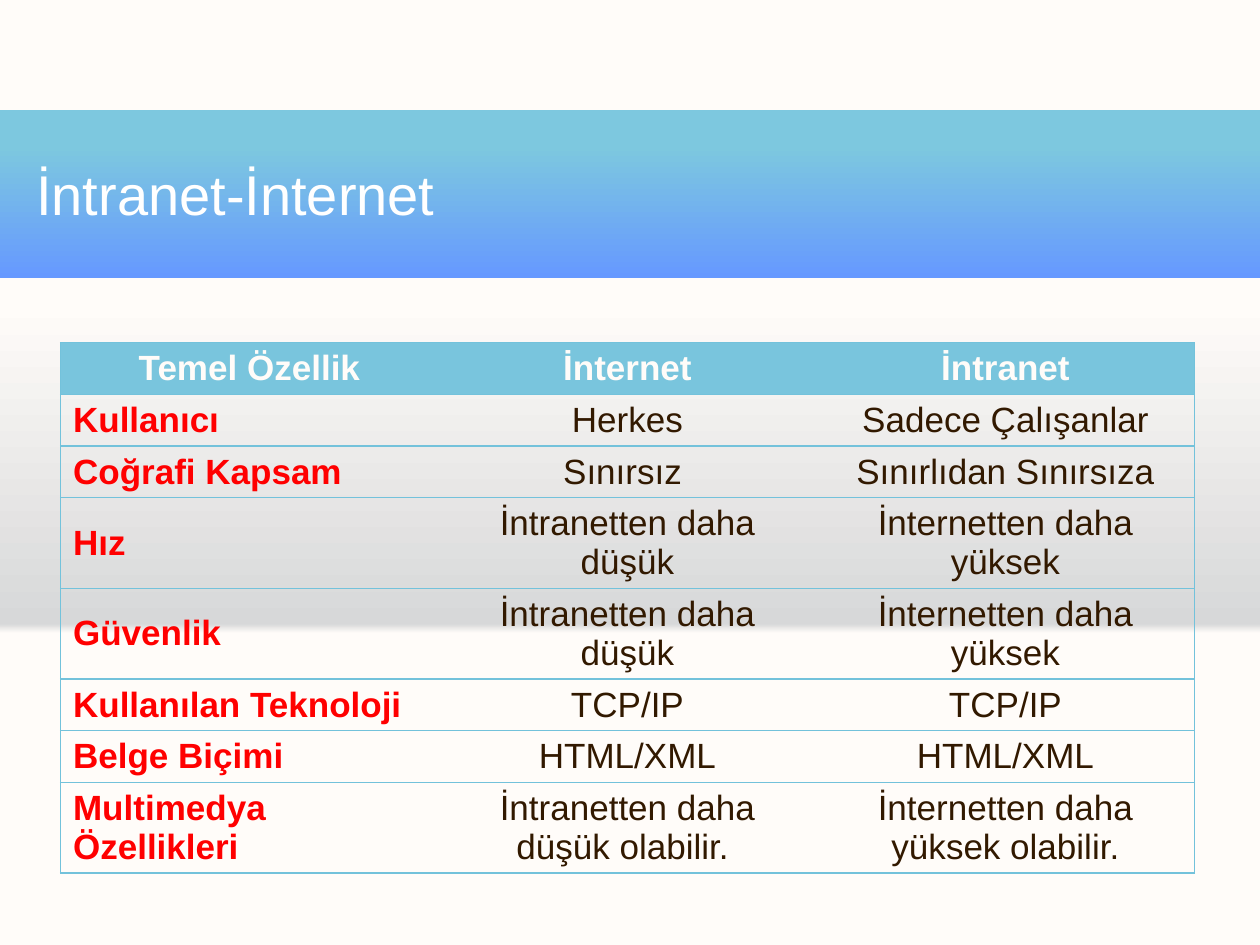
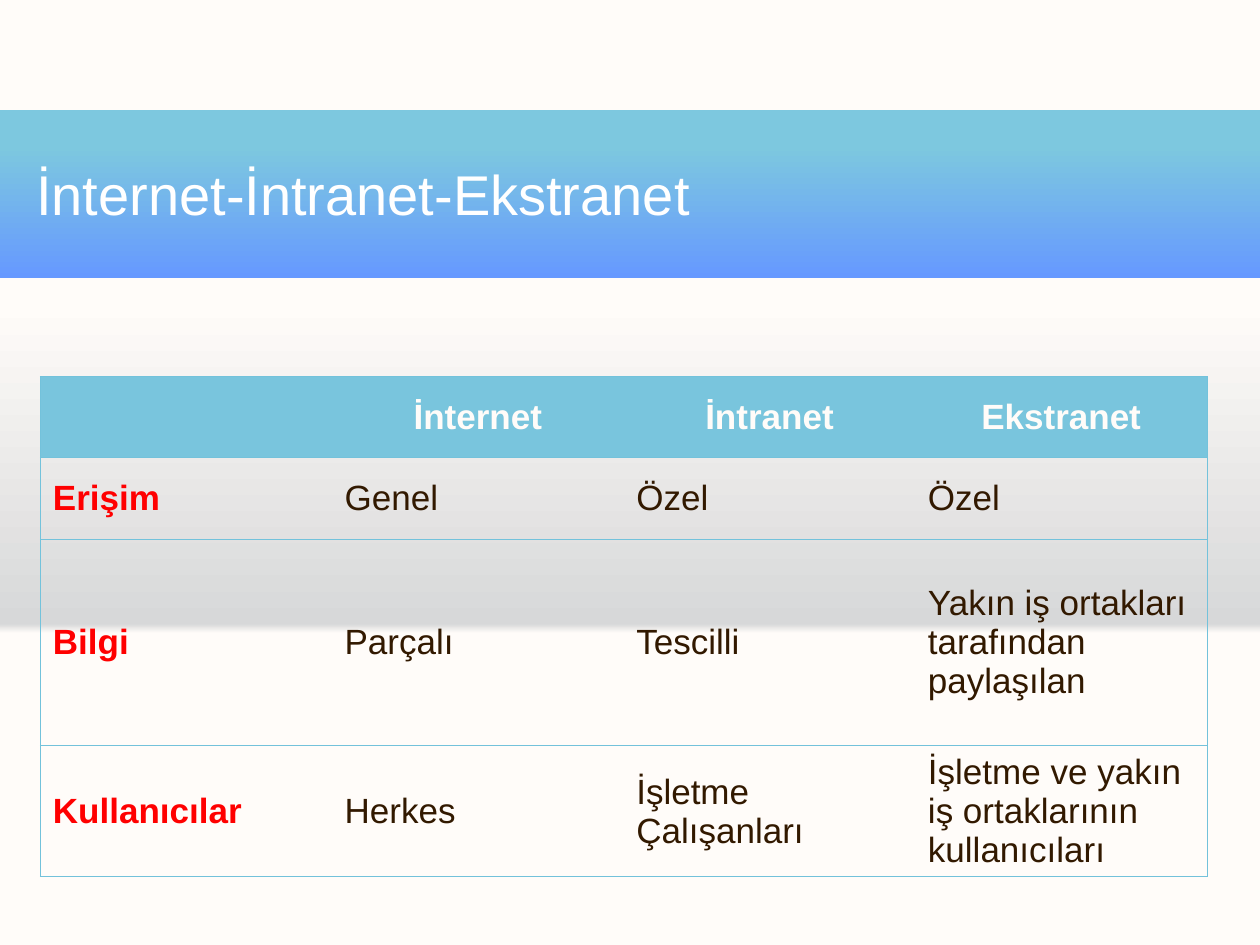
from lxml import etree
from pptx import Presentation
from pptx.dml.color import RGBColor
from pptx.enum import shapes, text
from pptx.oxml.ns import qn
from pptx.util import Inches, Pt

FONT = "Arial"
PAPER, GREY = "FFFCF9", "D7D8D9"
AQUA, BLUE = "7DC8DF", "6699FF"
HEADER, RULE = "79C5DD", "73C2DB"
RED, BROWN, WHITE = "FF0000", "321900", "FFFFFF"
PLAIN_TABLE = "{2D5ABB26-0587-4C30-8999-92F81FD0307C}"
LEFT, CENTER = text.PP_ALIGN.LEFT, text.PP_ALIGN.CENTER

TITLE_BAND = (0, 0.87, 10, 1.34)
TITLE_BOX = (0.19, 0.91, 8.03, 1.25)

FEATURES = [
    ["Temel Özellik", "İnternet", "İntranet"],
    ["Kullanıcı", "Herkes", "Sadece Çalışanlar"],
    ["Coğrafi Kapsam", "Sınırsız ", "Sınırlıdan Sınırsıza"],
    ["Hız", "İntranetten daha düşük", "İnternetten daha yüksek"],
    ["Güvenlik", "İntranetten daha düşük", "İnternetten daha yüksek"],
    ["Kullanılan Teknoloji", "TCP/IP", "TCP/IP"],
    ["Belge Biçimi", "HTML/XML", "HTML/XML"],
    ["Multimedya Özellikleri", "İntranetten daha düşük olabilir. ",
     "İnternetten daha yüksek olabilir."],
]
NETWORKS = [
    ["", "İnternet", "İntranet", "Ekstranet"],
    ["Erişim", "Genel", "Özel", "Özel"],
    ["Bilgi", "Parçalı", "Tescilli", "Yakın iş ortakları tarafından paylaşılan"],
    ["Kullanıcılar", "Herkes", "İşletme Çalışanları",
     "İşletme ve yakın iş ortaklarının kullanıcıları"],
]
ONE_LINE, TWO_LINES = 0.41, 0.72


def rgb(color):
    return RGBColor.from_string(color)


def inches(box):
    return [Inches(v) for v in box]


def write(tf, words, size=20, color=BROWN, bold=False, align=LEFT):
    tf.word_wrap = True
    p = tf.paragraphs[0]
    p.alignment = align
    r = p.add_run()
    r.text = words
    r.font.name, r.font.size, r.font.bold = FONT, Pt(size), bold
    r.font.color.rgb = rgb(color)


def set_gradient(fill, element, stops, angle):
    """Fill with (percent, colour) stops; the angle runs counter-clockwise."""
    fill.gradient()
    fill.gradient_angle = angle
    gs_list = next(element.iter(qn("a:gsLst")))
    for gs in list(gs_list):
        gs_list.remove(gs)
    for percent, color in stops:
        gs = etree.SubElement(gs_list, qn("a:gs"), pos=str(percent * 1000))
        etree.SubElement(gs, qn("a:srgbClr"), val=color)


def set_borders(cell, sides):
    """Draw thin lines on the given sides and none on the others."""
    tcPr = cell._tc.get_or_add_tcPr()
    for i, side in enumerate("LRTB"):
        ln = etree.Element(qn(f"a:ln{side}"), w=str(Pt(0.75)))
        if side in sides:
            paint = etree.SubElement(ln, qn("a:solidFill"))
            etree.SubElement(paint, qn("a:srgbClr"), val=RULE)
        else:
            etree.SubElement(ln, qn("a:noFill"))
        tcPr.insert(i, ln)


def add_title(slide, band, box, title):
    sp = slide.shapes.add_shape(shapes.MSO_SHAPE.RECTANGLE, *inches(band))
    sp.shadow.inherit = False
    sp.line.fill.background()
    set_gradient(sp.fill, sp._element, [(21, AQUA), (100, BLUE)], 270)
    tf = slide.shapes.add_textbox(*inches(box)).text_frame
    tf.vertical_anchor = text.MSO_ANCHOR.MIDDLE
    write(tf, title, size=32, color=WHITE)


def add_grid(slide, left, top, width, heights, rows, body_align):
    cols = len(rows[0])
    box = inches((left, top, width, sum(heights)))
    table = slide.shapes.add_table(len(rows), cols, *box).table
    table.horz_banding = False
    table._tbl.tblPr.find(qn("a:tableStyleId")).text = PLAIN_TABLE
    for col in table.columns:
        col.width = Inches(width / cols)
    for row, height in zip(table.rows, heights):
        row.height = Inches(height)
    for i, words in enumerate(rows):
        for j, word in enumerate(words):
            cell = table.cell(i, j)
            # Centred text without vertical margins keeps the row heights exact
            cell.vertical_anchor = text.MSO_ANCHOR.MIDDLE
            cell.margin_top = cell.margin_bottom = 0
            if i == 0:
                cell.fill.solid()
                cell.fill.fore_color.rgb = rgb(HEADER)
                style = dict(color=PAPER, bold=True, align=CENTER)
            else:
                cell.fill.background()
                style = dict(color=RED, bold=True) if j == 0 else dict(align=body_align)
            if word:
                write(cell.text_frame, word, **style)
            # Horizontal rules everywhere, vertical ones on the outside only
            set_borders(cell, "TB" + "L" * (j == 0) + "R" * (j == cols - 1))


def add_table_slide(prs, title, **grid):
    slide = prs.slides.add_slide(prs.slide_layouts[6])
    stops = [(33, PAPER), (34, GREY), (68, PAPER)]
    set_gradient(slide.background.fill, slide._element, stops, 90)
    add_title(slide, TITLE_BAND, TITLE_BOX, title)
    add_grid(slide, **grid)


def main():
    prs = Presentation()
    prs.slide_width, prs.slide_height = Inches(10), Inches(7.5)

    # Two-way comparison; rows with wrapped text are taller
    heights = [TWO_LINES if i in (3, 4, 7) else ONE_LINE for i in range(len(FEATURES))]
    add_table_slide(prs, "İntranet-İnternet", left=0.48, top=2.72, width=9,
                    heights=heights, rows=FEATURES, body_align=CENTER)

    # Three-way comparison
    add_table_slide(prs, "İnternet-İntranet-Ekstranet", left=0.32, top=2.99, width=9.26,
                    heights=[0.64, 0.65, 1.64, 1.04], rows=NETWORKS, body_align=LEFT)

    prs.save("out.pptx")


if __name__ == "__main__":
    main()
